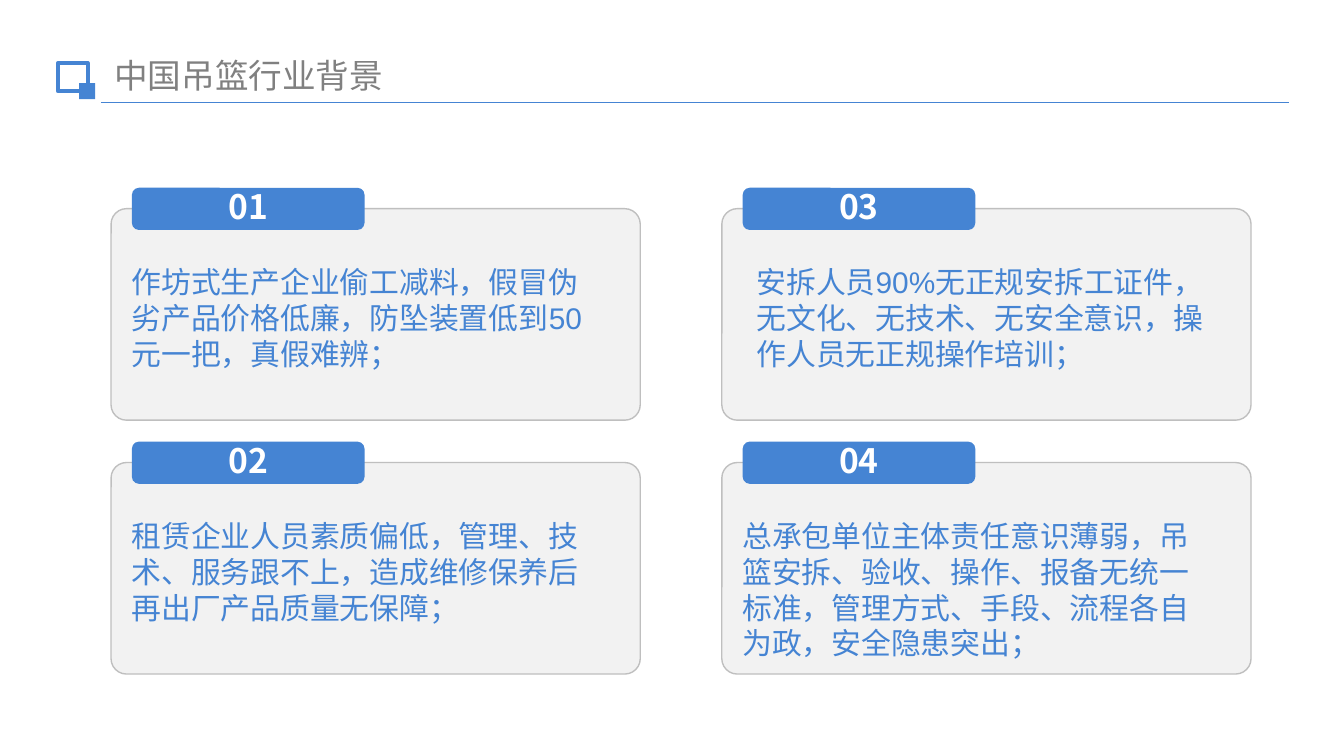
"""Build the slide on the background of the hanging-basket industry in China."""
import pptx
import pptx.dml.color
import pptx.enum.shapes
import pptx.enum.text
import pptx.oxml.ns
import pptx.util

Pt = pptx.util.Pt
SHAPE = pptx.enum.shapes.MSO_SHAPE
ALIGN = pptx.enum.text.PP_ALIGN
ANCHOR = pptx.enum.text.MSO_ANCHOR

TITLE = "中国吊篮行业背景"
CARDS = [
    ("01", "作坊式生产企业偷工减料，假冒伪劣产品价格低廉，防坠装置低到50元一把，真假难辨；", 0, 0, 4),
    ("03", "安拆人员90%无正规安拆工证件，无文化、无技术、无安全意识，操作人员无正规操作培训；", 1, 0, 11.5),
    ("02", "租赁企业人员素质偏低，管理、技术、服务跟不上，造成维修保养后再出厂产品质量无保障；", 0, 1, 4),
    ("04", "总承包单位主体责任意识薄弱，吊篮安拆、验收、操作、报备无统一标准，管理方式、手段、流程各自为政，安全隐患突出；", 1, 1, 4),
]
BLUE, WHITE, GREY = "4584D3", "FFFFFF", "808080"
CARD_FILL, CARD_LINE = "F2F2F2", "BFBFBF"
HEAD_FONT, BODY_FONT = "Noto Sans CJK SC", "Arial"
LEFT, TOP, PITCH_X, PITCH_Y = 59.5, 111.8, 327.2, 136
CARD_W, CARD_H = 283.5, 113.3
TAB_SHIFT, TAB_W, TAB_H = 11.2, 124.6, 22.6
BODY_DROP, BODY_W, BODY_H = 26, 268.6, 65.5


def rgb(value):
    return pptx.dml.color.RGBColor.from_string(value)


def place(sp, x, y, w, h):
    sp.left, sp.top, sp.width, sp.height = Pt(x), Pt(y), Pt(w), Pt(h)


def add_box(s, kind, x, y, w, h, fill, line=None, weight=0.75):
    sp = s.shapes.add_shape(kind, Pt(x), Pt(y), Pt(w), Pt(h))
    sp.shadow.inherit = False
    sp.fill.solid()
    sp.fill.fore_color.rgb = rgb(fill)
    if line:
        sp.line.color.rgb = rgb(line)
        sp.line.width = Pt(weight)
    else:
        sp.line.fill.background()
    return sp


def write(sp, text, size, font, color, align=ALIGN.LEFT, anchor=ANCHOR.TOP, bold=False):
    tf = sp.text_frame
    tf.text = text
    tf.word_wrap = True
    tf.vertical_anchor = anchor
    p = tf.paragraphs[0]
    p.alignment = align
    r = p.runs[0]
    r.font.size, r.font.name, r.font.bold = Pt(size), font, bold
    r.font.color.rgb = rgb(color)
    return p


def add_header(s):
    place(s.shapes.title, 54, 25.9, 193, 28.8)
    write(s.shapes.title, TITLE, 18, HEAD_FONT, GREY)
    rule = s.shapes.add_connector(
        pptx.enum.shapes.MSO_CONNECTOR.STRAIGHT, Pt(54), Pt(55), Pt(690.5), Pt(55))
    rule.line.color.rgb = rgb(BLUE)
    rule.line.width = Pt(0.75)
    pr = rule._element.spPr
    pr.append(pr.makeelement(pptx.oxml.ns.qn("a:effectLst"), {}))
    add_box(s, SHAPE.RECTANGLE, 31, 33.8, 16, 15.2, WHITE, BLUE, 2)
    add_box(s, SHAPE.RECTANGLE, 42.4, 44.6, 8.6, 8.6, BLUE)


def add_card(s, number, text, col, row, indent):
    x, y = LEFT + col * PITCH_X, TOP + row * PITCH_Y
    card = add_box(s, SHAPE.ROUNDED_RECTANGLE, x, y, CARD_W, CARD_H, CARD_FILL, CARD_LINE)
    card.adjustments[0] = 0.073
    tab = add_box(s, SHAPE.FLOWCHART_ALTERNATE_PROCESS,
                  x + TAB_SHIFT, y - TAB_SHIFT, TAB_W, TAB_H, BLUE)
    p = write(tab, number, 18, HEAD_FONT, WHITE, ALIGN.CENTER, ANCHOR.MIDDLE, True)
    p.line_spacing = 0.9
    body = s.shapes.add_textbox(Pt(x + indent), Pt(y + BODY_DROP), Pt(BODY_W), Pt(BODY_H))
    write(body, text, 16, BODY_FONT, BLUE)


def main():
    prs = pptx.Presentation()
    prs.slide_width, prs.slide_height = Pt(720), Pt(405)
    s = prs.slides.add_slide(prs.slide_layouts[5])
    add_header(s)
    for card in CARDS:
        add_card(s, *card)
    prs.save("out.pptx")


if __name__ == "__main__":
    main()
